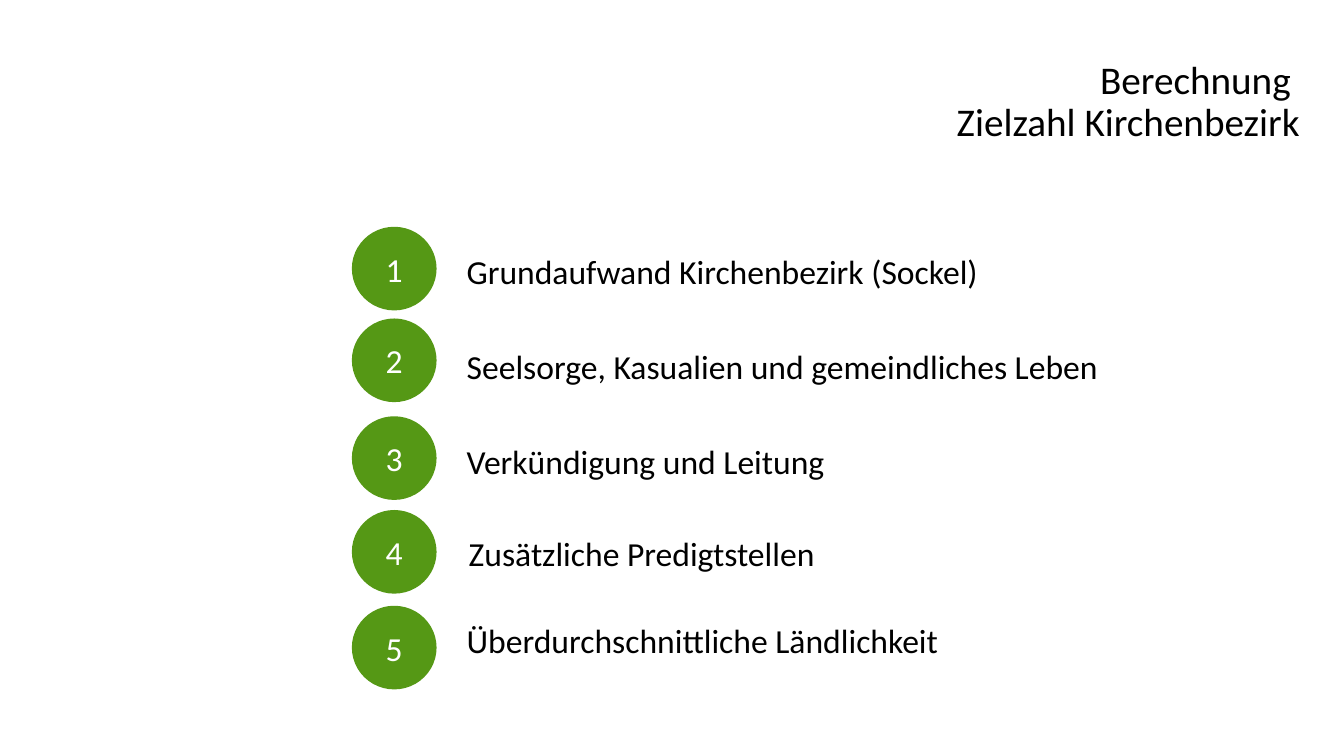
from dataclasses import dataclass

from lxml import etree
from pptx import Presentation
from pptx.dml.color import RGBColor
from pptx.enum import shapes, text
from pptx.oxml import ns
from pptx.util import Inches, Pt


@dataclass(frozen=True)
class Theme:
    font: str = "Calibri"
    heading_size: int = 28
    body_size: int = 24
    ink: str = "000000"
    paper: str = "FFFFFF"
    green: str = "559815"
    band_opacity: int = 76


@dataclass(frozen=True)
class Step:
    label: str
    label_top: float
    circle_top: float
    label_left: float = 4.53


THEME = Theme()
STEPS = [
    Step("Grundaufwand Kirchenbezirk (Sockel)", 2.34, 2.25),
    Step("Seelsorge, Kasualien und gemeindliches Leben", 3.29, 3.16),
    Step("Verkündigung und Leitung", 4.23, 4.13),
    Step("Zusätzliche Predigtstellen", 5.14, 5.06, label_left=4.55),
    Step("Überdurchschnittliche Ländlichkeit", 6.01, 6.01),
]


def write(shape, content: str, *, size: int = THEME.body_size, color: str = THEME.ink,
          align=text.PP_ALIGN.LEFT, line_spacing: float = 0.9) -> None:
    frame = shape.text_frame
    frame.text = content
    frame.word_wrap = True
    frame.auto_size = text.MSO_AUTO_SIZE.NONE
    frame.vertical_anchor = text.MSO_ANCHOR.MIDDLE
    paragraph = frame.paragraphs[0]
    paragraph.alignment = align
    paragraph.line_spacing = line_spacing
    for run in paragraph.runs:
        run.font.name = THEME.font
        run.font.size = Pt(size)
        run.font.color.rgb = RGBColor.from_string(color)


def add_filled_shape(slide, kind, left: float, top: float, width: float, height: float,
                     color: str, opacity: int = 100):
    shape = slide.shapes.add_shape(
        kind, Inches(left), Inches(top), Inches(width), Inches(height))
    shape.shadow.inherit = False
    shape.line.fill.background()
    shape.fill.solid()
    shape.fill.fore_color.rgb = RGBColor.from_string(color)
    if opacity < 100:
        color_element = shape.fill._xPr.find(".//" + ns.qn("a:srgbClr"))
        etree.SubElement(color_element, ns.qn("a:alpha"), val=str(opacity * 1000))
    return shape


def add_heading(slide, content: str) -> None:
    title = slide.shapes.title
    title.left, title.top = Inches(6.77), Inches(0.55)
    title.width, title.height = Inches(6.22), Inches(0.94)
    write(title, content, size=THEME.heading_size, align=text.PP_ALIGN.RIGHT)


def add_step(slide, number: int, step: Step) -> None:
    label = add_filled_shape(slide, shapes.MSO_SHAPE.RECTANGLE, step.label_left,
                             step.label_top, 8.78, 0.74, THEME.paper, THEME.band_opacity)
    write(label, step.label)
    circle = add_filled_shape(slide, shapes.MSO_SHAPE.OVAL, 3.49, step.circle_top,
                              0.84, 0.83, THEME.green)
    write(circle, str(number), color=THEME.paper, align=text.PP_ALIGN.CENTER,
          line_spacing=1.0)


def main() -> None:
    presentation = Presentation()
    presentation.slide_width, presentation.slide_height = Inches(13.33), Inches(7.5)
    title_only = presentation.slide_layouts.get_by_name("Title Only")
    slide = presentation.slides.add_slide(title_only)
    add_heading(slide, "Berechnung \vZielzahl Kirchenbezirk")
    for number, step in enumerate(STEPS, start=1):
        add_step(slide, number, step)
    presentation.save("out.pptx")


if __name__ == "__main__":
    main()
